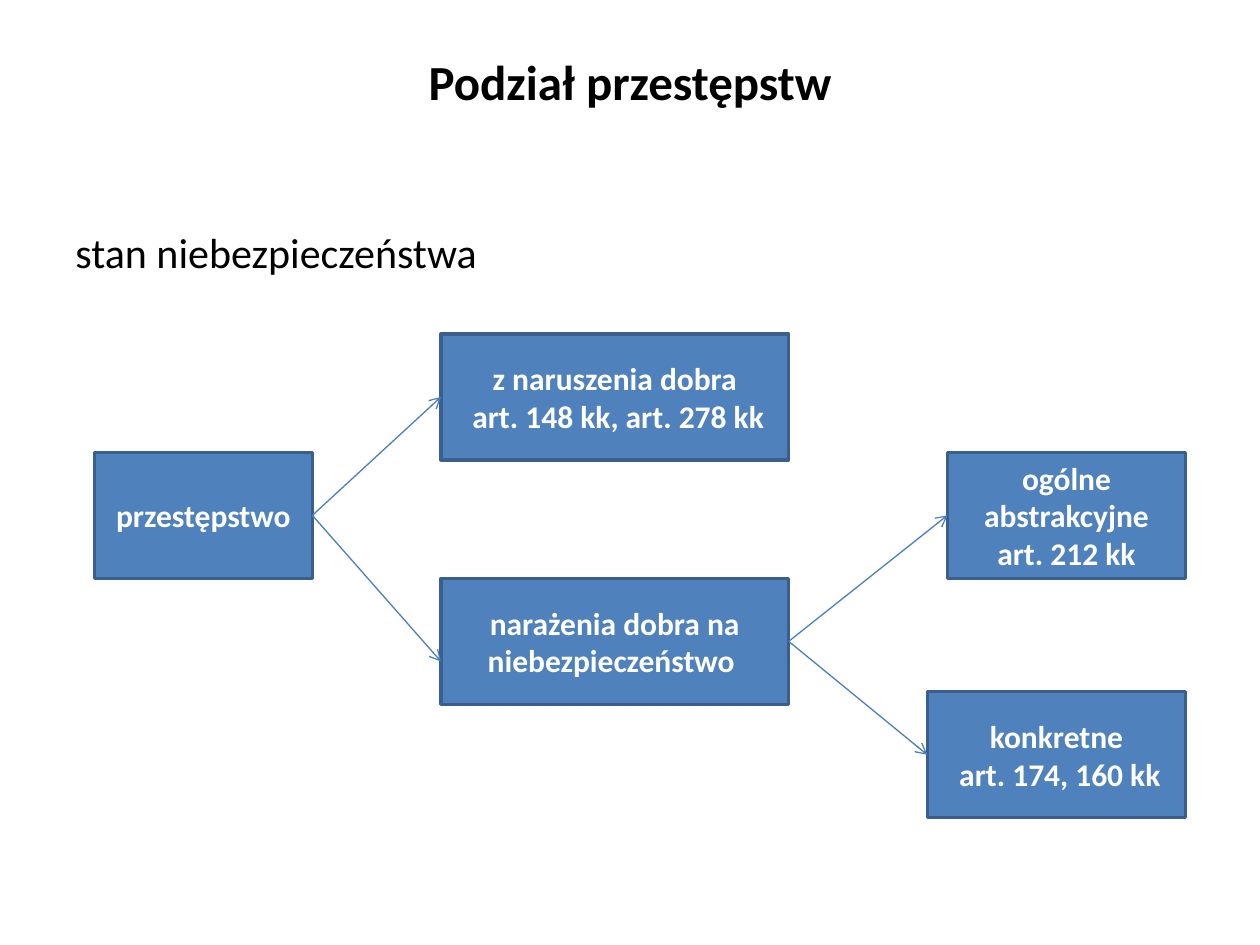
from dataclasses import dataclass
from typing import Any

from lxml import etree
from pptx import Presentation
from pptx import util as u
from pptx.dml.color import RGBColor
from pptx.enum import shapes, text
from pptx.oxml import ns

COLORS = {"fill": "4F81BD", "edge": "3A5F8C", "arrow": "4B7EBC",
          "dark": "000000", "light": "FFFFFF"}
BOX_HEIGHT = 72
FRAME = {"word_wrap": True, "vertical_anchor": text.MSO_ANCHOR.MIDDLE}
TITLE = {"name": "Calibri", "size": u.Pt(28), "bold": True}
BODY = {"name": "Calibri", "size": u.Pt(24), "bold": False}
LABEL = {"name": "Calibri", "size": u.Pt(18), "bold": True}


@dataclass(frozen=True)
class Box:
    left: float
    top: float
    width: float
    lines: tuple[str, ...]

    @property
    def right(self) -> float:
        return self.left + self.width

    @property
    def middle(self) -> float:
        return self.top + BOX_HEIGHT / 2


@dataclass(frozen=True)
class Arrow:
    start: Box
    end: Box
    drop: float = 0


def rgb(key: str) -> RGBColor:
    return RGBColor.from_string(COLORS[key])


def apply(obj: Any, values: dict[str, Any]) -> None:
    for name, value in values.items():
        setattr(obj, name, value)


def write(tf: Any, lines: tuple[str, ...], font: dict[str, Any],
          color: str, align: Any, frame: dict[str, Any]) -> None:
    apply(tf, frame)
    for i, line in enumerate(lines):
        p = tf.add_paragraph() if i else tf.paragraphs[0]
        p.alignment = align
        r = p.add_run()
        r.text = line
        apply(r.font, font)
        r.font.color.rgb = rgb(color)


def draw_box(s: Any, box: Box) -> None:
    sp = s.shapes.add_shape(shapes.MSO_SHAPE.RECTANGLE, u.Pt(box.left), u.Pt(box.top),
                            u.Pt(box.width), u.Pt(BOX_HEIGHT))
    sp.shadow.inherit = False
    sp.fill.solid()
    sp.fill.fore_color.rgb = rgb("fill")
    sp.line.color.rgb = rgb("edge")
    sp.line.width = u.Pt(2)
    write(sp.text_frame, box.lines, LABEL, "light", text.PP_ALIGN.CENTER, FRAME)


def draw_arrow(s: Any, arrow: Arrow) -> None:
    sp = s.shapes.add_connector(
        shapes.MSO_CONNECTOR.STRAIGHT, u.Pt(arrow.start.right), u.Pt(arrow.start.middle),
        u.Pt(arrow.end.left), u.Pt(arrow.end.middle + arrow.drop))
    sp.line.color.rgb = rgb("arrow")
    sp.line.width = u.Pt(0.75)
    etree.SubElement(sp.line._get_or_add_ln(), ns.qn("a:tailEnd"), type="arrow")
    etree.SubElement(sp._element.spPr, ns.qn("a:effectLst"))


def main() -> None:
    prs = Presentation()
    apply(prs, {"slide_width": u.Pt(720), "slide_height": u.Pt(540)})
    s = prs.slides.add_slide(prs.slide_layouts[6])

    title = s.shapes.add_textbox(u.Pt(36), u.Pt(21.6), u.Pt(648), u.Pt(49.7))
    write(title.text_frame, ("Podział przestępstw",), TITLE, "dark",
          text.PP_ALIGN.CENTER, FRAME)
    body = s.shapes.add_textbox(u.Pt(36), u.Pt(126), u.Pt(648), u.Pt(356.4))
    write(body.text_frame, ("stan niebezpieczeństwa",), BODY, "dark",
          text.PP_ALIGN.LEFT, FRAME | {"vertical_anchor": text.MSO_ANCHOR.TOP})

    offence = Box(54, 258.5, 124.5, ("przestępstwo",))
    harm = Box(252, 190.8, 198.7, ("z naruszenia dobra", " art. 148 kk, art. 278 kk"))
    danger = Box(252, 330.5, 198.7, ("narażenia dobra na niebezpieczeństwo ",))
    abstract = Box(541.4, 258.5, 136.1, ("ogólne abstrakcyjne art. 212 kk",))
    concrete = Box(529.9, 395.3, 147.6, ("konkretne", " art. 174, 160 kk"))

    for box in (offence, harm, danger, abstract, concrete):
        draw_box(s, box)
    for arrow in (Arrow(offence, harm), Arrow(offence, danger, 11.5),
                  Arrow(danger, abstract), Arrow(danger, concrete)):
        draw_arrow(s, arrow)

    prs.save("out.pptx")


if __name__ == "__main__":
    main()
